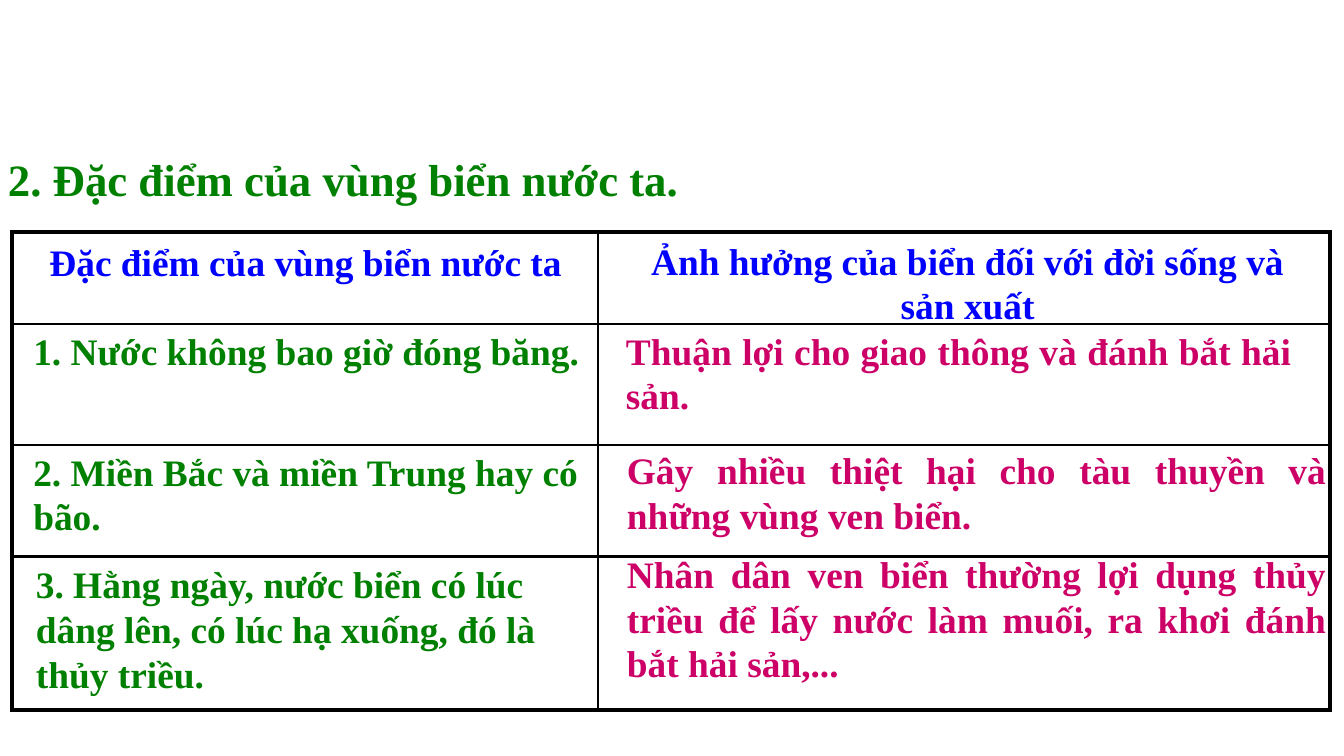
from lxml import etree
from pptx import Presentation
from pptx.dml.color import RGBColor
from pptx.enum.text import MSO_AUTO_SIZE, PP_ALIGN
from pptx.oxml.ns import qn
from pptx.util import Cm, Pt

LEFT, CENTER, JUSTIFY = PP_ALIGN.LEFT, PP_ALIGN.CENTER, PP_ALIGN.JUSTIFY
FIT_SHAPE = MSO_AUTO_SIZE.SHAPE_TO_FIT_TEXT

FONT = "Times New Roman"
BLACK, WHITE = "000000", "FFFFFF"
BLUE, GREEN, PINK = "0000FF", "008000", "CC0066"
OUTER_LINE, INNER_LINE = Pt(2.25), Pt(1.5)

COLUMN_WIDTHS = [11.07, 13.84]
ROW_HEIGHTS = [1.73, 2.29, 2.11, 2.9]

# left, top, width, height in cm, colour, alignment, paragraphs
TABLE_TEXTS = [
    (0.23, 4.39, 11.1, 1.12, BLUE, CENTER, ["Đặc điểm của vùng biển nước ta"]),
    (0.38, 6.07, 11.2, 1.12, GREEN, LEFT, ["1. Nước không bao giờ đóng băng."]),
    (0.38, 8.36, 12.1, 1.96, GREEN, LEFT,
     ["2. Miền Bắc và miền Trung hay có bão."]),
    (0.43, 10.49, 11, 2.82, GREEN, LEFT,
     ["3. Hằng ngày, nước biển có lúc dâng lên, có lúc hạ xuống, "
      "đó là thủy triều."]),
    (11.43, 4.37, 13.72, 1.96, BLUE, CENTER,
     ["Ảnh hưởng của biển đối với đời sống và", "sản xuất"]),
    (11.58, 6.07, 13.08, 1.96, PINK, JUSTIFY,
     ["Thuận lợi cho giao thông và đánh bắt hải sản."]),
    (11.6, 8.33, 13.72, 1.96, PINK, JUSTIFY,
     ["Gây nhiều thiệt hại cho tàu thuyền và những vùng ven biển."]),
    (11.6, 10.29, 13.72, 2.82, PINK, JUSTIFY,
     ["Nhân dân ven biển thường lợi dụng thủy triều để lấy nước làm muối, "
      "ra khơi đánh bắt hải sản,..."]),
]


def color(value):
    return RGBColor.from_string(value)


def set_borders(cell, widths):
    """Draw the left, right, top and bottom borders, ahead of the cell fill."""
    properties = cell._tc.get_or_add_tcPr()
    for index, (side, width) in enumerate(zip("LRTB", widths)):
        line = etree.Element(qn(f"a:ln{side}"), w=str(width))
        fill = etree.SubElement(line, qn("a:solidFill"))
        etree.SubElement(fill, qn("a:srgbClr"), val=BLACK)
        properties.insert(index, line)


def add_grid(slide, left, top):
    last_row, last_column = len(ROW_HEIGHTS) - 1, len(COLUMN_WIDTHS) - 1
    table = slide.shapes.add_table(
        len(ROW_HEIGHTS), len(COLUMN_WIDTHS), Cm(left), Cm(top),
        Cm(sum(COLUMN_WIDTHS)), Cm(sum(ROW_HEIGHTS))).table
    for column, width in zip(table.columns, COLUMN_WIDTHS):
        column.width = Cm(width)
    for row_index, height in enumerate(ROW_HEIGHTS):
        table.rows[row_index].height = Cm(height)
        for column_index in range(len(COLUMN_WIDTHS)):
            cell = table.cell(row_index, column_index)
            cell.fill.solid()
            cell.fill.fore_color.rgb = color(WHITE)
            on_edge = (column_index == 0, column_index == last_column,
                       row_index == 0, row_index == last_row)
            set_borders(cell, [OUTER_LINE if edge else INNER_LINE
                               for edge in on_edge])


def add_text(slide, left, top, width, height, text_color, alignment,
             paragraphs, size=20):
    box = slide.shapes.add_textbox(Cm(left), Cm(top), Cm(width), Cm(height))
    frame = box.text_frame
    frame.word_wrap = True
    frame.auto_size = FIT_SHAPE
    for index, text in enumerate(paragraphs):
        paragraph = frame.add_paragraph() if index else frame.paragraphs[0]
        paragraph.alignment = alignment
        run = paragraph.add_run()
        run.text = text
        run.font.name = FONT
        run.font.size = Pt(size)
        run.font.bold = True
        run.font.color.rgb = color(text_color)


def main():
    presentation = Presentation()
    presentation.slide_width = Cm(25.4)
    presentation.slide_height = Cm(14.29)
    slide = presentation.slides.add_slide(presentation.slide_layouts[6])
    add_grid(slide, 0.23, 4.39)
    for table_text in TABLE_TEXTS:
        add_text(slide, *table_text)
    add_text(slide, -0.1, 2.74, 25.4, 1.27, GREEN, LEFT,
             ["2. Đặc điểm của vùng biển nước ta."], size=24)
    presentation.save("out.pptx")


if __name__ == "__main__":
    main()
